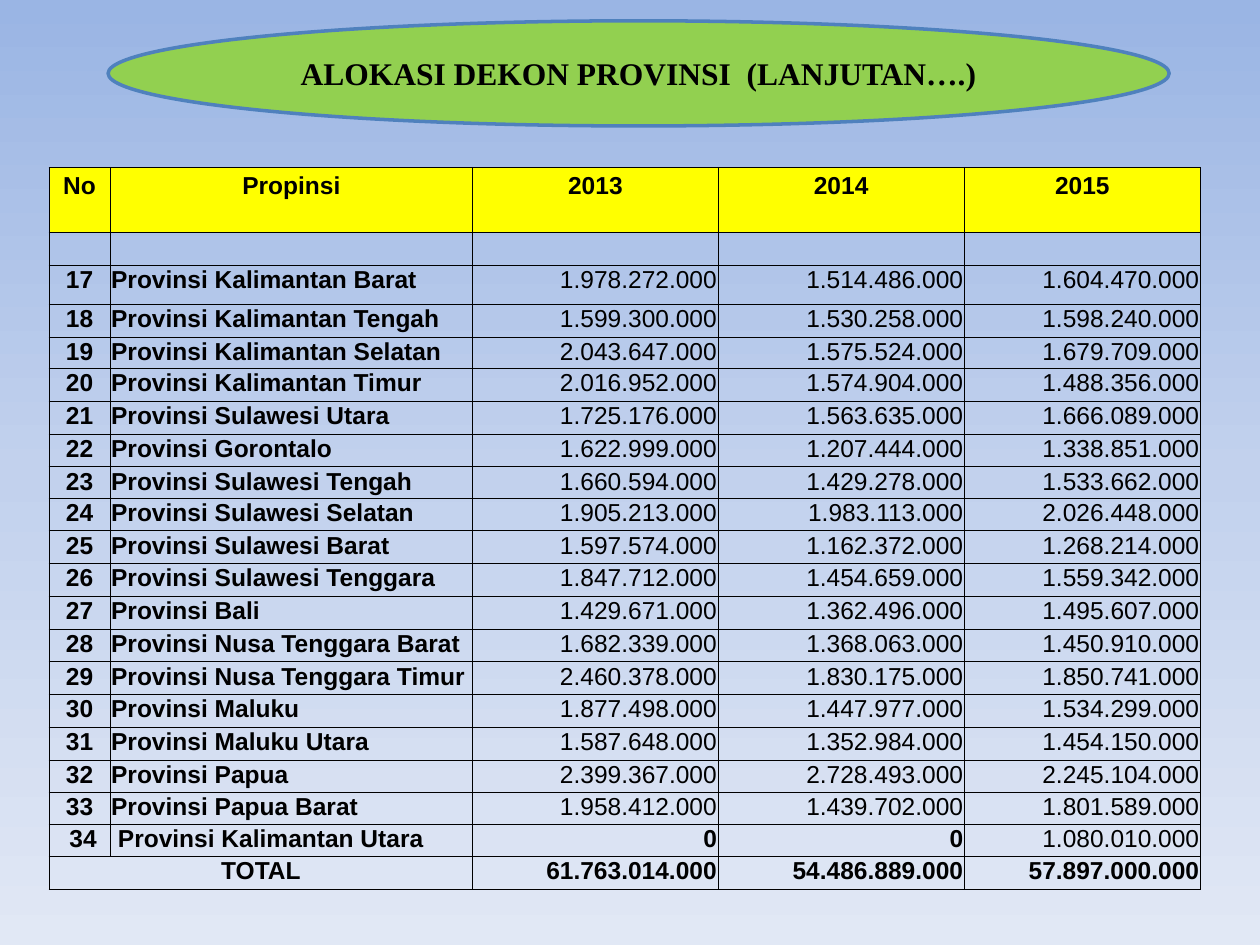
from copy import deepcopy

from lxml.etree import SubElement
from pptx import Presentation
from pptx.dml.color import RGBColor
from pptx.enum.shapes import MSO_SHAPE as Shape
from pptx.enum.text import MSO_ANCHOR as Anchor, PP_ALIGN as Align
from pptx.oxml.ns import qn
from pptx.util import Cm, Pt

BLACK = RGBColor(0x00, 0x00, 0x00)
YELLOW = RGBColor(0xFF, 0xFF, 0x00)
GREEN = RGBColor(0x92, 0xD0, 0x50)
BLUE = RGBColor(0x4F, 0x81, 0xBD)
SKY = [RGBColor(0x9A, 0xB5, 0xE4), RGBColor(0xC2, 0xD1, 0xED), RGBColor(0xE1, 0xE8, 0xF5)]

HEADINGS = ("No", "Propinsi", "2013", "2014", "2015")
PROVINCES = [
    ("17", "Provinsi Kalimantan Barat", "1.978.272.000", "1.514.486.000", "1.604.470.000"),
    ("18", "Provinsi Kalimantan Tengah", "1.599.300.000", "1.530.258.000", "1.598.240.000"),
    ("19", "Provinsi Kalimantan Selatan", "2.043.647.000", "1.575.524.000", "1.679.709.000"),
    ("20", "Provinsi Kalimantan Timur", "2.016.952.000", "1.574.904.000", "1.488.356.000"),
    ("21", "Provinsi Sulawesi Utara", "1.725.176.000", "1.563.635.000", "1.666.089.000"),
    ("22", "Provinsi Gorontalo", "1.622.999.000", "1.207.444.000", "1.338.851.000"),
    ("23", "Provinsi Sulawesi Tengah", "1.660.594.000", "1.429.278.000", "1.533.662.000"),
    ("24", "Provinsi Sulawesi Selatan", "1.905.213.000", "1.983.113.000", "2.026.448.000"),
    ("25", "Provinsi Sulawesi Barat", "1.597.574.000", "1.162.372.000", "1.268.214.000"),
    ("26", "Provinsi Sulawesi Tenggara", "1.847.712.000", "1.454.659.000", "1.559.342.000"),
    ("27", "Provinsi Bali", "1.429.671.000", "1.362.496.000", "1.495.607.000"),
    ("28", "Provinsi Nusa Tenggara Barat", "1.682.339.000", "1.368.063.000", "1.450.910.000"),
    ("29", "Provinsi Nusa Tenggara Timur", "2.460.378.000", "1.830.175.000", "1.850.741.000"),
    ("30", "Provinsi Maluku", "1.877.498.000", "1.447.977.000", "1.534.299.000"),
    ("31", "Provinsi Maluku Utara", "1.587.648.000", "1.352.984.000", "1.454.150.000"),
    ("32", "Provinsi Papua", "2.399.367.000", "2.728.493.000", "2.245.104.000"),
    ("33", "Provinsi Papua Barat", "1.958.412.000", "1.439.702.000", "1.801.589.000"),
    (" 34", " Provinsi Kalimantan Utara", " 0", " 0", "1.080.010.000"),
]
TOTAL = ("TOTAL", "", "61.763.014.000", "54.486.889.000", "57.897.000.000")
BLANK = ("",) * len(HEADINGS)
ROWS = [HEADINGS, BLANK, BLANK, *PROVINCES, TOTAL]
HEADER_ROWS = 2

COLUMN_SHARES = (0.053, 0.315, 0.213, 0.214, 0.205)
ROW_HEIGHT = Cm(0.66)
ROW_HEIGHTS = {"17": Cm(0.79), "19": Cm(0.63), "23": Cm(0.63), "33": Cm(0.63)}
ALIGNMENTS = (Align.CENTER, Align.LEFT, Align.RIGHT, Align.RIGHT, Align.RIGHT)


def paint_background(page):
    fill = page.background.fill
    fill.gradient()
    fill.gradient_angle = 270
    stop_list = next(page._element.iter(qn("a:gsLst")))
    stop_list.insert(1, deepcopy(stop_list[0]))
    for index, (stop, color) in enumerate(zip(fill.gradient_stops, SKY)):
        stop.position = index / 2
        stop.color.rgb = color


def set_font(para, name, size, bold):
    font = para.font
    font.name, font.size, font.bold = name, Pt(size), bold
    font.color.rgb = BLACK


def add_title(page, left, top, width, height):
    oval = page.shapes.add_shape(Shape.OVAL, left, top, width, height)
    oval.shadow.inherit = False
    oval.fill.solid()
    oval.fill.fore_color.rgb = GREEN
    oval.line.color.rgb = BLUE
    oval.line.width = Pt(2)
    frame = oval.text_frame
    frame.word_wrap = False
    frame.vertical_anchor = Anchor.MIDDLE
    para = frame.paragraphs[0]
    para.text = "ALOKASI DEKON PROVINSI  (LANJUTAN….)"
    para.alignment = Align.CENTER
    set_font(para, "Times New Roman", 18, True)


def draw_borders(cell, hidden_side):
    """Rule all four sides of the cell except the hidden one."""
    properties = cell._tc.get_or_add_tcPr()
    for side in ("lnL", "lnR", "lnT", "lnB"):
        line = SubElement(properties, qn(f"a:{side}"), w=str(Pt(0.5)))
        if side == hidden_side:
            SubElement(line, qn("a:noFill"))
        else:
            solid = SubElement(line, qn("a:solidFill"))
            SubElement(solid, qn("a:srgbClr"), val=str(BLACK))


def format_cell(cell, text, row, column):
    is_header = row < HEADER_ROWS
    is_total = row == len(ROWS) - 1
    cell.margin_left = cell.margin_right = cell.margin_top = Cm(0.02)
    cell.margin_bottom = 0
    cell.vertical_anchor = Anchor.BOTTOM if is_header else Anchor.TOP
    draw_borders(cell, {0: "lnB", 1: "lnT"}.get(row))
    if is_header:
        cell.fill.solid()
        cell.fill.fore_color.rgb = YELLOW
    else:
        cell.fill.background()
    para = cell.text_frame.paragraphs[0]
    centred = is_header or (is_total and column == 0)
    para.alignment = Align.CENTER if centred else ALIGNMENTS[column]
    bold = is_header or is_total or column < 2 or text.strip() == "0"
    set_font(para, "Arial", 14, bold)
    if text:
        para.text = text
    else:
        SubElement(para._p, qn("a:endParaRPr"), sz="1400")


def add_allocation_table(page, left, top, width):
    height = ROW_HEIGHT * len(ROWS)
    frame = page.shapes.add_table(len(ROWS), len(HEADINGS), left, top, width, height)
    table = frame.table
    table.first_row = table.horz_banding = False
    for column, share in zip(table.columns, COLUMN_SHARES):
        column.width = int(width * share)
    for row, texts in enumerate(ROWS):
        table.rows[row].height = ROW_HEIGHTS.get(texts[0], ROW_HEIGHT)
        for column, text in enumerate(texts):
            format_cell(table.cell(row, column), text, row, column)
    last = len(ROWS) - 1
    table.cell(last, 0).merge(table.cell(last, 1))


def main():
    deck = Presentation()
    deck.slide_width, deck.slide_height = Cm(25.4), Cm(19.05)
    page = deck.slides.add_slide(deck.slide_layouts[6])
    paint_background(page)
    add_title(page, Cm(2.18), Cm(0.42), Cm(21.39), Cm(2.12))
    add_allocation_table(page, Cm(0.99), Cm(3.37), Cm(23.21))
    deck.save("out.pptx")


if __name__ == "__main__":
    main()
